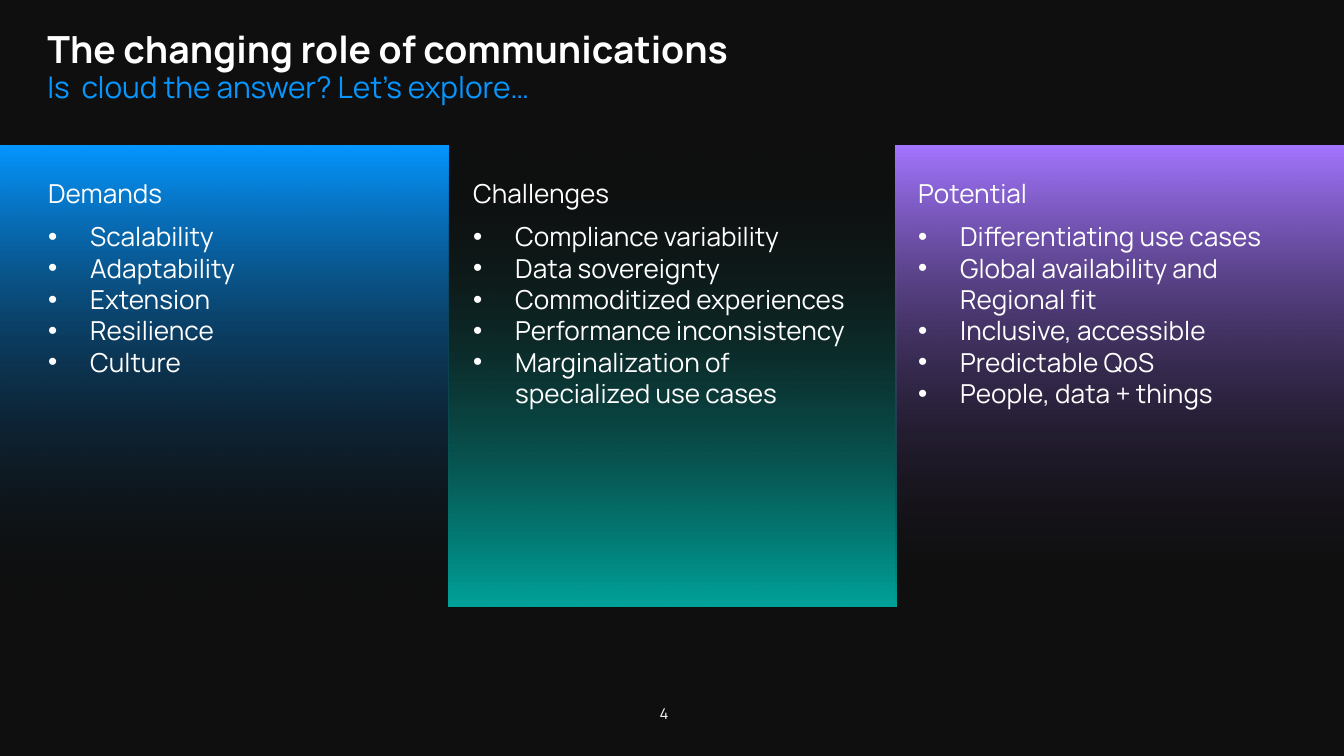
import copy

import pptx
import pptx.dml.color
import pptx.enum.shapes
import pptx.enum.text
import pptx.oxml.ns
import pptx.util
from lxml import etree

COLORS = {
    "background": "0F0F0F",
    "text": "FFFFFF",
    "blue": "0596FF",
    "teal": "00A39B",
    "purple": "A375FF",
}
PANEL_WIDTH = 448
PANEL_TOP = 146
PANEL_HEIGHT = 461
DOWN, UP = 270, 90

COLUMNS = [
    ("Demands", "blue", DOWN, 35, 403,
     ["Scalability", "Adaptability", "Extension", "Resilience", "Culture"]),
    ("Challenges", "teal", UP, 12, 426,
     ["Compliance variability", "Data sovereignty", "Commoditized experiences",
      "Performance inconsistency", "Marginalization of \vspecialized use cases"]),
    ("Potential", "purple", DOWN, 9, 429,
     ["Differentiating use cases", "Global availability and Regional fit",
      "Inclusive, accessible", "Predictable QoS", "People, data + things"]),
]


class Deck:
    FONT = "Manrope"
    EMU_PER_PX = 914400 / 134.4

    def __init__(self, width, height):
        self.presentation = pptx.Presentation()
        self.presentation.slide_width = self.px(width)
        self.presentation.slide_height = self.px(height)
        self.slide = self.presentation.slides.add_slide(self.presentation.slide_layouts[5])
        fill = self.slide.background.fill
        fill.solid()
        fill.fore_color.rgb = self.color("background")

    def px(self, length):
        return pptx.util.Emu(round(length * self.EMU_PER_PX))

    def color(self, name):
        return pptx.dml.color.RGBColor.from_string(COLORS[name])

    def set_lines(self, frame, lines, size, color="text", bold=False, align="LEFT",
                  anchor="TOP", bullet_indent=0):
        frame_format = {
            "word_wrap": True,
            "auto_size": pptx.enum.text.MSO_AUTO_SIZE.NONE,
            "vertical_anchor": getattr(pptx.enum.text.MSO_ANCHOR, anchor),
        }
        for attribute, value in frame_format.items():
            setattr(frame, attribute, value)
        font_format = {"name": self.FONT, "size": pptx.util.Pt(size), "bold": bold}
        for index, line in enumerate(lines):
            paragraph = frame.add_paragraph() if index else frame.paragraphs[0]
            paragraph.text = line
            paragraph.alignment = getattr(pptx.enum.text.PP_ALIGN, align)
            if bullet_indent:
                self.bullet(paragraph, bullet_indent)
            for run in paragraph.runs:
                for attribute, value in font_format.items():
                    setattr(run.font, attribute, value)
                run.font.color.rgb = self.color(color)
            for line_break in paragraph._p.findall(pptx.oxml.ns.qn("a:br")):
                line_break.append(copy.deepcopy(paragraph.runs[0]._r.rPr))

    def bullet(self, paragraph, indent):
        properties = paragraph._p.get_or_add_pPr()
        properties.set("marL", str(self.px(indent)))
        properties.set("indent", str(-self.px(indent)))
        typeface = etree.SubElement(properties, pptx.oxml.ns.qn("a:buFont"))
        typeface.set("typeface", "Arial")
        etree.SubElement(properties, pptx.oxml.ns.qn("a:buChar")).set("char", "•")

    def title(self, text, left, top, width, height, **style):
        heading = self.slide.shapes.title
        box = {"left": left, "top": top, "width": width, "height": height}
        for attribute, value in box.items():
            setattr(heading, attribute, self.px(value))
        self.set_lines(heading.text_frame, [text], **style)

    def text(self, lines, left, top, width, height, **style):
        box = self.slide.shapes.add_textbox(*map(self.px, (left, top, width, height)))
        self.set_lines(box.text_frame, lines, **style)

    def fading_panel(self, left, top, width, height, color, angle):
        panel = self.slide.shapes.add_shape(
            pptx.enum.shapes.MSO_SHAPE.RECTANGLE,
            *map(self.px, (left, top, width, height)))
        panel.shadow.inherit = False
        panel.line.fill.background()
        panel.fill.gradient()
        panel.fill.gradient_angle = angle
        for stop, name, position in zip(panel.fill.gradient_stops, (color, "background"), (0, 1)):
            stop.color.rgb = self.color(name)
            stop.position = position
        faded = list(panel._element.spPr.iter(pptx.oxml.ns.qn("a:srgbClr")))[-1]
        etree.SubElement(faded, pptx.oxml.ns.qn("a:alpha")).set("val", "0")


def main():
    deck = Deck(1344, 756)
    deck.title("The changing role of communications", 34, 19, 1261, 107, size=20, bold=True)
    deck.text(["Is  cloud the answer? Let’s explore…"], 34, 62, 1261, 64, size=16, color="blue")
    deck.text(["4"], 632, 698, 64, 32, size=8, align="CENTER", anchor="MIDDLE")
    for index, (heading, color, angle, inset, width, points) in enumerate(COLUMNS):
        panel_left = index * PANEL_WIDTH
        text_left = panel_left + inset
        deck.fading_panel(panel_left, PANEL_TOP, PANEL_WIDTH, PANEL_HEIGHT, color, angle)
        deck.text([heading], text_left, 171, width, 46, size=14)
        deck.text(points, text_left, 214, width, 203, size=14, bullet_indent=42)
    deck.presentation.save("out.pptx")


if __name__ == "__main__":
    main()
